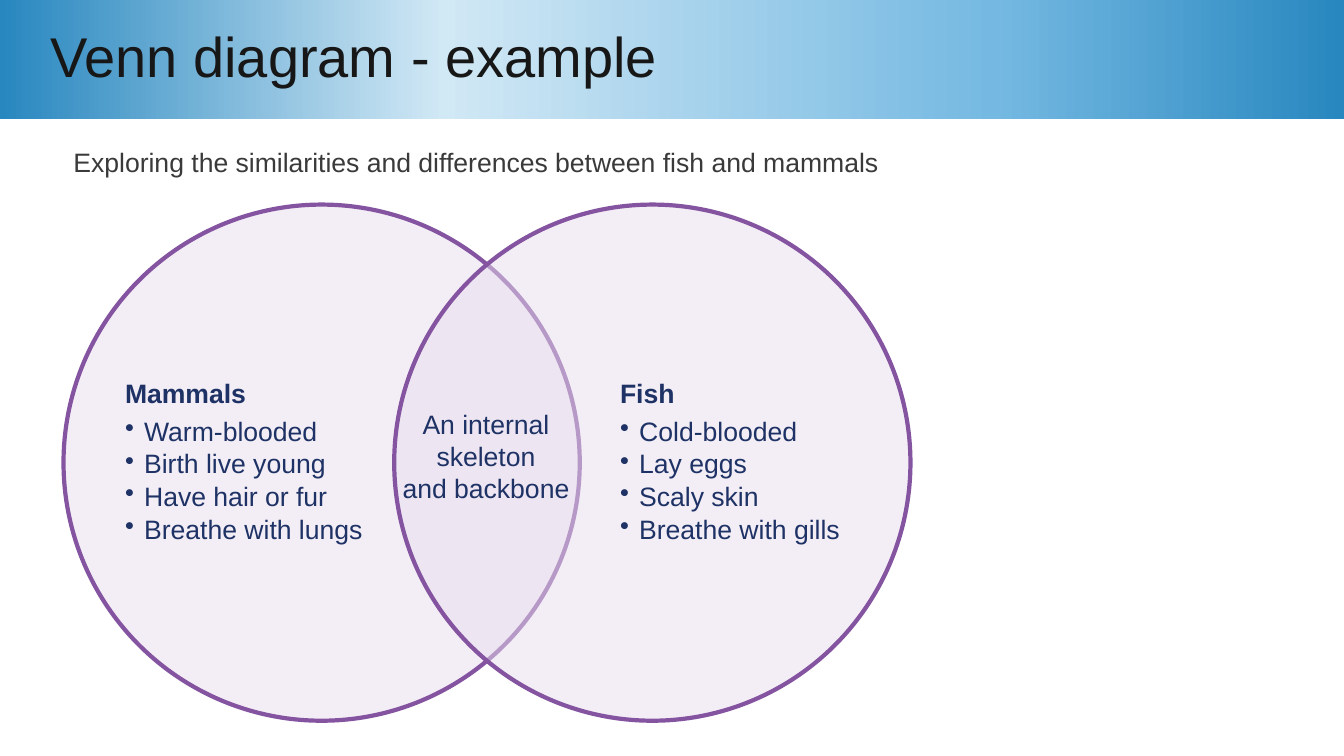
from lxml.etree import SubElement
from pptx import Presentation
from pptx.dml.color import RGBColor
from pptx.enum.shapes import MSO_SHAPE as Preset
from pptx.enum.text import MSO_ANCHOR as Anchor, MSO_AUTO_SIZE as AutoSize, PP_ALIGN as Align
from pptx.oxml.ns import qn
from pptx.util import Inches, Pt


def color(value):
    return RGBColor.from_string(value)


class VennSlide:
    font_name = "Arial"
    body_size = 19
    navy = "1E3265"
    gray = "3A3A3A"
    black = "171717"
    circle_fill = "E9DFEF"
    circle_line = "8554A1"
    banner_stops = [(0, "2887BF"), (33, "D1E8F5"), (74, "75B9E2"), (100, "2887BF")]

    def __init__(self, presentation):
        self.slide = presentation.slides.add_slide(presentation.slide_layouts[6])

    def format_text(self, paragraph, size, text_color, bold=False):
        for run in paragraph.runs:
            run.font.name = self.font_name
            run.font.size = Pt(size)
            run.font.bold = bold
            run.font.color.rgb = color(text_color)

    def set_indent(self, paragraph, left, first=0):
        properties = paragraph._p.get_or_add_pPr()
        properties.set("marL", str(Inches(left)))
        properties.set("indent", str(Inches(first)))
        return properties

    def add_shape(self, preset, left, top, width, height):
        shape = self.slide.shapes.add_shape(
            preset, Inches(left), Inches(top), Inches(width), Inches(height))
        shape.shadow.inherit = False
        return shape

    def add_banner(self, text, width, height):
        banner = self.add_shape(Preset.RECTANGLE, 0, 0, width, height)
        banner.line.fill.background()
        banner.fill.gradient()
        banner.fill.gradient_angle = 0
        stops = banner._element.spPr.find(qn("a:gradFill")).find(qn("a:gsLst"))
        for stop in list(stops):
            stops.remove(stop)
        for position, value in self.banner_stops:
            stop = SubElement(stops, qn("a:gs"), pos=str(position * 1000))
            SubElement(stop, qn("a:srgbClr"), val=value)
        text_frame = banner.text_frame
        text_frame.text = text
        text_frame.vertical_anchor = Anchor.MIDDLE
        paragraph = text_frame.paragraphs[0]
        self.set_indent(paragraph, 0.4)
        paragraph.alignment = Align.LEFT
        paragraph.line_spacing = 0.9
        self.format_text(paragraph, 40, self.black)

    def add_circle(self, left, top, diameter):
        circle = self.add_shape(Preset.OVAL, left, top, diameter, diameter)
        circle.fill.solid()
        circle.fill.fore_color.rgb = color(self.circle_fill)
        fill_color = circle._element.spPr.find(qn("a:solidFill")).find(qn("a:srgbClr"))
        SubElement(fill_color, qn("a:alpha"), val="50000")
        circle.line.color.rgb = color(self.circle_line)
        circle.line.width = Pt(3)

    def add_text(self, text, left, top, width, height, text_color, align=Align.LEFT, wrap=True):
        box = self.slide.shapes.add_textbox(
            Inches(left), Inches(top), Inches(width), Inches(height))
        text_frame = box.text_frame
        text_frame.word_wrap = wrap
        text_frame.auto_size = AutoSize.SHAPE_TO_FIT_TEXT
        text_frame.text = text
        paragraph = text_frame.paragraphs[0]
        paragraph.alignment = align
        self.format_text(paragraph, self.body_size, text_color)

    def add_list(self, heading, items, left, top, width, height):
        box = self.slide.shapes.add_textbox(
            Inches(left), Inches(top), Inches(width), Inches(height))
        text_frame = box.text_frame
        text_frame.word_wrap = True
        text_frame.vertical_anchor = Anchor.MIDDLE
        text_frame.margin_left = text_frame.margin_right = 0
        text_frame.margin_top = text_frame.margin_bottom = 0
        text_frame.text = "\n".join([heading] + items)
        for index, paragraph in enumerate(text_frame.paragraphs):
            is_heading = index == 0
            if not is_heading:
                properties = self.set_indent(paragraph, 0.19, -0.19)
                SubElement(properties, qn("a:buChar"), char="•")
                paragraph.level = 1
            paragraph.line_spacing = 0.9
            paragraph.space_after = Pt(self.body_size * (0.35 if is_heading else 0.15))
            self.format_text(paragraph, self.body_size, self.navy, is_heading)


def main():
    presentation = Presentation()
    presentation.slide_width = Inches(13.33)
    presentation.slide_height = Inches(7.5)
    venn = VennSlide(presentation)
    venn.add_banner("Venn diagram - example", 13.33, 1.18)

    top, diameter = 2.03, 5.12
    groups = [
        ("Mammals", 0.63, 1.24,
         ["Warm-blooded", "Birth live young", "Have hair or fur", "Breathe with lungs"]),
        ("Fish", 3.91, 6.15,
         ["Cold-blooded", "Lay eggs", "Scaly skin", "Breathe with gills"]),
    ]
    for heading, circle_left, text_left, items in groups:
        venn.add_circle(circle_left, top, diameter)
        venn.add_list(heading, items, text_left, top, 2.6, diameter)

    venn.add_text("An internal\vskeleton\vand backbone", 3.88, 4, 1.88, 1.06,
                  venn.navy, Align.CENTER, wrap=False)
    venn.add_text("Exploring the similarities and differences between fish and mammals",
                  0.63, 1.4, 9.91, 0.42, venn.gray)
    presentation.save("out.pptx")


if __name__ == "__main__":
    main()
